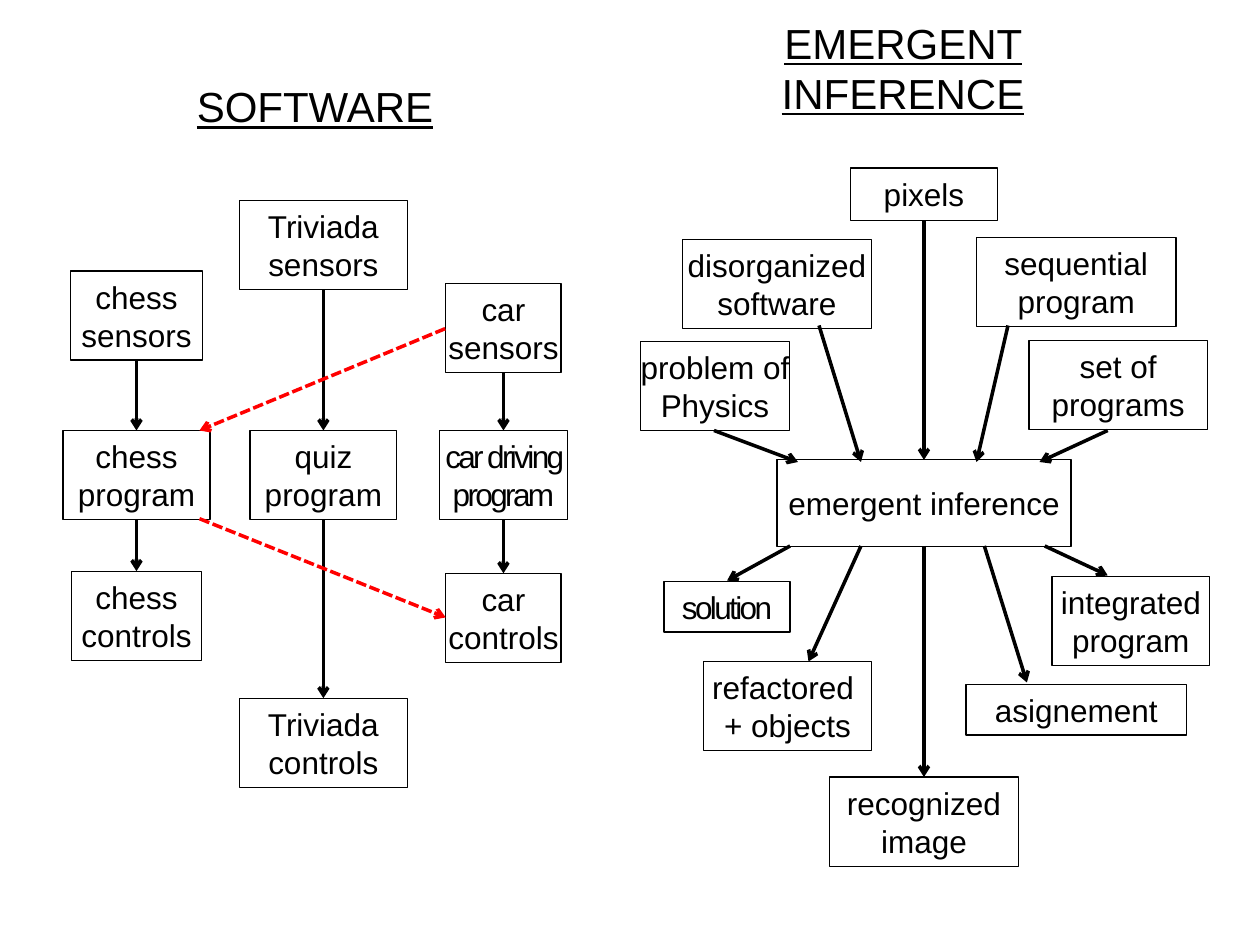
import pptx
import pptx.dml.color
import pptx.enum.dml
import pptx.enum.shapes
import pptx.enum.text
import pptx.oxml
import pptx.oxml.ns
import pptx.util

COLORS = {"ink": "000000", "cross": "FF0000"}
FONT = "Arial"
SLIDE_W, SLIDE_H = pptx.util.Inches(10), pptx.util.Inches(7.5)
COLS, ROWS = 120, 90
BOX_H = 8.5
LINE_H = 4.8
PROGRAM_TOP = 41
HUB_BOTTOM = 52

# name, program, centre column, sensors top, controls top,
# widths of sensors, program and controls, side inset, program spacing
SOFTWARE = [
    ("chess", "chess program", 13, 25.8, 54.4, (12.6, 14, 12.4), 0.05, 0),
    ("Triviada", "quiz program", 30.8, 19.1, 66.5, (16, 14, 16), 0.05, 0),
    ("car", "car driving program", 47.95, 27, 54.6, (11, 12.15, 11), 0, -1.5),
]

# text, left, top, width, height, arrow start, arrow end
INPUTS = [
    ("problem of Physics", 61, 32.5, 14.2, BOX_H, (68, 41), (76, 44)),
    ("disorganized\nsoftware", 65, 22.8, 18, BOX_H, (78, 31), (82, 44)),
    ("pixels", 81, 16, 14, 5, (88, 21), (88, 43.8)),
    ("sequential\nprogram", 93, 22.6, 19, BOX_H, (96, 31), (93, 44)),
    ("set of\nprograms", 98, 32.4, 17, BOX_H, (105.5, 41), (99, 44)),
]

# text, left, top, width, height, arrow start column, arrow end, spacing
OUTPUTS = [
    ("solution", 63.25, 55.4, 12, LINE_H, 75.25, (69.25, 55.3), -1.5),
    ("refactored \n+ objects", 67, 63, 16, BOX_H, 82, (77, 63), 0),
    ("recognized\nimage", 79, 74, 18, BOX_H, 88, (88, 74), 0),
    ("asignement", 92, 65.2, 21, LINE_H, 93.75, (97.8, 65), 0),
    ("integrated\nprogram", 100.2, 54.9, 15, BOX_H, 99.5, (105.5, 54.8), 0),
]


def rgb(name):
    return pptx.dml.color.RGBColor.from_string(COLORS[name])


def x(col):
    return round(SLIDE_W * col / COLS)


def y(row):
    return round(SLIDE_H * row / ROWS)


def write(sp, text, size, inset, underline=None, spacing=0, leading=None):
    """Fill a shape with centred text, one paragraph per line."""
    tf = sp.text_frame
    tf.text = text
    tf.word_wrap = True
    tf.vertical_anchor = pptx.enum.text.MSO_ANCHOR.MIDDLE
    tf.margin_left = tf.margin_right = pptx.util.Inches(inset)
    tf.margin_top = tf.margin_bottom = pptx.util.Inches(0.05)
    for p in tf.paragraphs:
        p.alignment = pptx.enum.text.PP_ALIGN.CENTER
        if leading:
            p.line_spacing = pptx.util.Pt(leading)
        for r in p.runs:
            r.font.name = FONT
            r.font.size = pptx.util.Pt(size)
            r.font.underline = underline
            r.font.color.rgb = rgb("ink")
            if spacing:
                r._r.get_or_add_rPr().set("spc", str(round(spacing * 100)))


def add_title(s, text, left, top, width, height):
    sp = s.shapes.add_textbox(x(left), y(top), x(width), y(height))
    write(sp, text, 24, 0.1, underline=True)


def add_box(s, text, left, top, width, height=BOX_H, inset=0, **style):
    sp = s.shapes.add_shape(pptx.enum.shapes.MSO_SHAPE.RECTANGLE,
                            x(left), y(top), x(width), y(height))
    sp.shadow.inherit = False
    sp.fill.background()
    sp.line.color.rgb = rgb("ink")
    sp.line.width = pptx.util.Pt(0.75)
    write(sp, text, 18, inset, **style)


def add_arrow(s, start, end, color="ink", dash=None):
    c = s.shapes.add_connector(pptx.enum.shapes.MSO_CONNECTOR.STRAIGHT,
                               x(start[0]), y(start[1]), x(end[0]), y(end[1]))
    c.line.color.rgb = rgb(color)
    c.line.width = pptx.util.Pt(2)
    if dash:
        c.line.dash_style = dash
    ns = pptx.oxml.ns.nsdecls("a")
    c.line._get_or_add_ln().append(
        pptx.oxml.parse_xml(f'<a:tailEnd {ns} type="arrow"/>'))
    c._element.spPr.append(pptx.oxml.parse_xml(f"<a:effectLst {ns}/>"))


def add_software(s):
    add_title(s, "SOFTWARE", 16, 7.1, 28, 6)
    for name, program, center, sensors, controls, widths, inset, spacing in SOFTWARE:
        add_arrow(s, (center, sensors + BOX_H), (center, PROGRAM_TOP))
        add_arrow(s, (center, PROGRAM_TOP + BOX_H), (center, controls))
        stack = [(f"{name}\nsensors", sensors, 0), (program, PROGRAM_TOP, spacing),
                 (f"{name}\ncontrols", controls, 0)]
        for (text, top, gap), width in zip(stack, widths):
            add_box(s, text, center - width / 2, top, width,
                    inset=inset, spacing=gap)
    dash = pptx.enum.dml.MSO_LINE.SQUARE_DOT
    add_arrow(s, (19, 49.4), (42.45, 58.8), "cross", dash)
    add_arrow(s, (42.4, 31.3), (19, PROGRAM_TOP), "cross", dash)


def add_inference(s):
    add_title(s, "EMERGENT INFERENCE", 72, 1, 28, 10.9)
    add_box(s, "emergent inference", 74, 43.8, 28, 8.25, inset=0.05, leading=21.6)
    for text, left, top, width, height, start, end in INPUTS:
        add_box(s, text, left, top, width, height)
        add_arrow(s, start, end)
    for text, left, top, width, height, start_col, end, spacing in OUTPUTS:
        add_box(s, text, left, top, width, height, spacing=spacing)
        add_arrow(s, (start_col, HUB_BOTTOM), end)


def main():
    prs = pptx.Presentation()
    prs.slide_width, prs.slide_height = SLIDE_W, SLIDE_H
    s = prs.slides.add_slide(prs.slide_layouts[6])
    add_software(s)
    add_inference(s)
    prs.save("out.pptx")


if __name__ == "__main__":
    main()
